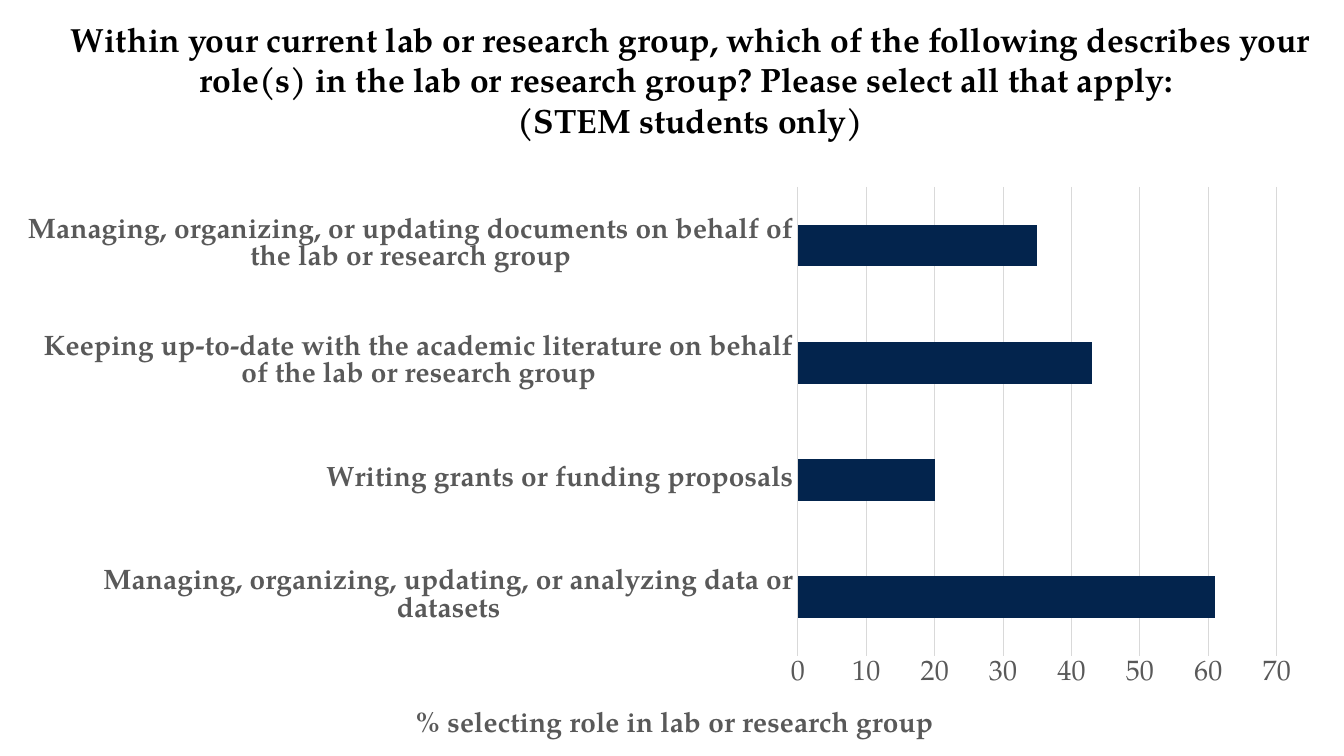
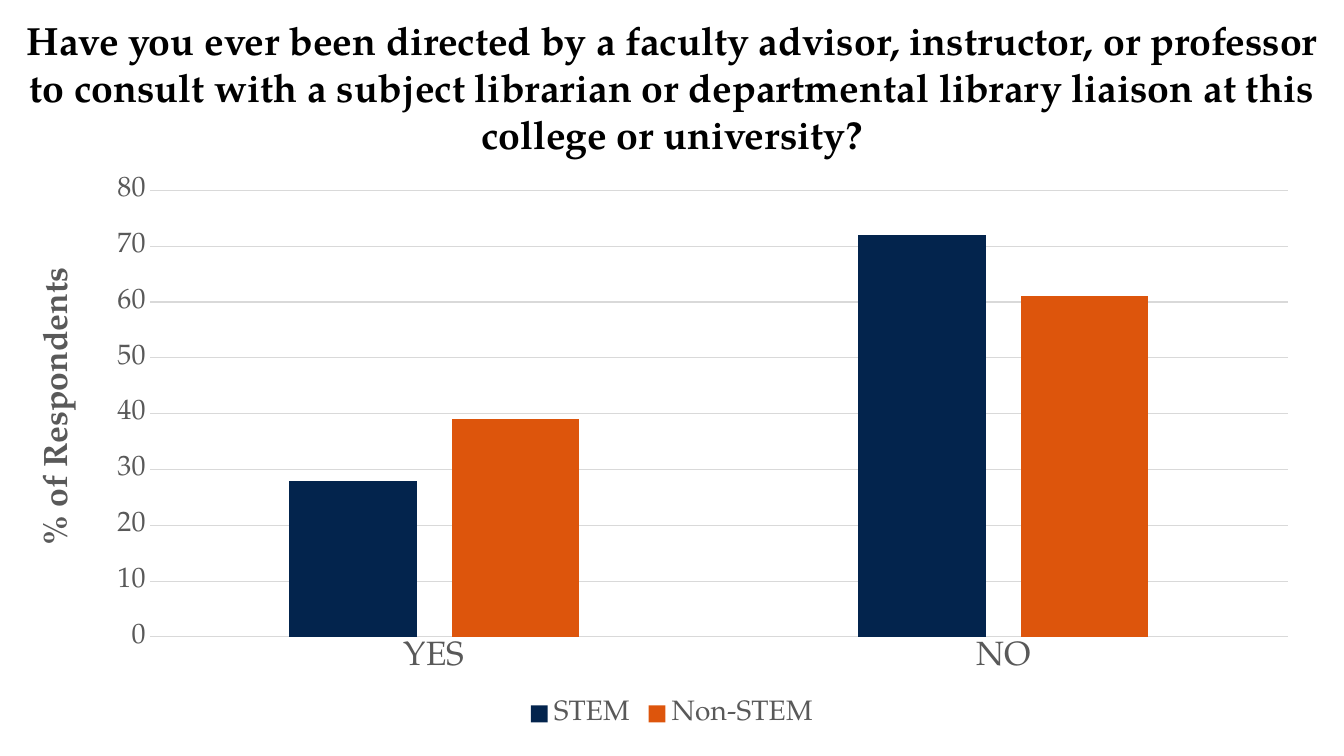
import pptx
import pptx.chart.data
import pptx.dml.color
import pptx.enum.chart
import pptx.enum.text
import pptx.oxml
import pptx.oxml.ns
import pptx.util

Pt = pptx.util.Pt
qn = pptx.oxml.ns.qn
XL = pptx.enum.chart

FONT = "TeX Gyre Pagella"
COLORS = {
    "title": "000000",
    "label": "595959",
    "grid": "D9D9D9",
    "navy": "03244D",
    "orange": "DD550C",
}


def rgb(name):
    return pptx.dml.color.RGBColor.from_string(COLORS[name])


def style_font(font, size, color="label", bold=False):
    font.name = FONT
    font.size = Pt(size)
    font.bold = bold
    font.color.rgb = rgb(color)


def write_text(tf, lines, **fmt):
    """Fill a text frame with centred paragraphs in one format."""
    for i, line in enumerate(lines):
        p = tf.add_paragraph() if i else tf.paragraphs[0]
        p.alignment = pptx.enum.text.PP_ALIGN.CENTER
        r = p.add_run()
        r.text = line
        style_font(r.font, **fmt)


def add_title(s, lines, box, size):
    tf = s.shapes.add_textbox(*map(Pt, box)).text_frame
    tf.word_wrap = True
    write_text(tf, lines, size=size, color="title", bold=True)


def place(element, frame, box, index=0):
    """Fix a chart part at box, given in slide points (left, top[, width, height])."""
    left, top, width, height = frame
    origin, extent = (left, top, 0, 0), (width, height, width, height)
    settings = [("xMode", "edge"), ("yMode", "edge")]
    if len(box) == 4:
        settings.insert(0, ("layoutTarget", "inner"))
    for key, value, start, total in zip("xywh", box, origin, extent):
        settings.append((key, str((value - start) / total)))

    for old in element.findall(qn("c:layout")):
        element.remove(old)
    layout = pptx.oxml.parse_xml(
        '<c:layout xmlns:c="http://schemas.openxmlformats.org/drawingml/2006/chart">'
        "<c:manualLayout>"
        + "".join(f'<c:{key} val="{value}"/>' for key, value in settings)
        + "</c:manualLayout></c:layout>")
    element.insert(index, layout)


def style_axis(axis, size, bold=False):
    axis.major_tick_mark = axis.minor_tick_mark = XL.XL_TICK_MARK.NONE
    style_font(axis.tick_labels.font, size, bold=bold)


def style_line(line):
    line.color.rgb = rgb("grid")
    line.width = Pt(0.75)


def add_bar_chart(s, kind, cats, series, frame, plot_box, axis_title, title_at,
                  title_size, maximum, gap, overlap=0, cat_size=20,
                  cat_bold=False, title_rotation=0, legend=False):
    """Add a bar or column chart; series holds (name, values, colour)."""
    data = pptx.chart.data.CategoryChartData()
    data.categories = cats
    for name, values, _ in series:
        data.add_series(name, values)
    chart = s.shapes.add_chart(kind, *map(Pt, frame), data).chart
    chart.has_title = False

    # Bars
    plot = chart.plots[0]
    plot.vary_by_categories = False
    plot.gap_width = gap
    plot.overlap = overlap
    for bars, (_, _, color) in zip(plot.series, series):
        bars.format.fill.solid()
        bars.format.fill.fore_color.rgb = rgb(color)

    # Axes
    style_axis(chart.category_axis, cat_size, cat_bold)
    style_line(chart.category_axis.format.line)
    axis = chart.value_axis
    style_axis(axis, 20)
    axis.minimum_scale, axis.maximum_scale, axis.major_unit = 0, maximum, 10
    axis.format.line.fill.background()
    style_line(axis.major_gridlines.format.line)

    # Value axis title
    tf = axis.axis_title.text_frame
    write_text(tf, [axis_title], size=title_size, bold=True)
    tf._txBody.find(qn("a:bodyPr")).set("rot", str(title_rotation * 60000))
    place(axis.axis_title._element, frame, title_at, index=1)

    # Legend and plot area
    chart.has_legend = legend
    if legend:
        chart.legend.position = XL.XL_LEGEND_POSITION.BOTTOM
        chart.legend.include_in_layout = False
        style_font(chart.legend.font, 20)
    place(chart._chartSpace.chart.plotArea, frame, plot_box)


def lab_roles(s):
    add_bar_chart(
        s, XL.XL_CHART_TYPE.BAR_CLUSTERED,
        ["Managing, organizing, updating, or analyzing data or datasets",
         "Writing grants or funding proposals",
         "Keeping up-to-date with the academic literature on behalf of the lab "
         "or research group",
         "Managing, organizing, or updating documents on behalf of the lab or "
         "research group"],
        [("Series 1", (61, 20, 43, 35), "navy")],
        frame=(13, 126, 929, 414), plot_box=(570, 133.5, 342, 335),
        axis_title="% selecting role in lab or research group",
        title_at=(293, 503), title_size=20, maximum=70, gap=182, cat_bold=True)
    add_title(
        s, ["Within your current lab or research group, which of the following "
            "describes your role(s) in the lab or research group? Please select "
            "all that apply: ",
            "(STEM students only)"],
        (13, 10, 960, 94), size=24)


def librarian_referrals(s):
    add_bar_chart(
        s, XL.XL_CHART_TYPE.COLUMN_CLUSTERED, ["YES", "NO"],
        [("STEM", (28, 72), "navy"), ("Non-STEM", (39, 61), "orange")],
        frame=(22, 117.5, 916, 407), plot_box=(107, 136, 813, 319),
        axis_title="% of Respondents", title_at=(24, 187), title_size=24,
        title_rotation=-90, maximum=80, gap=219, overlap=-27, cat_size=24,
        legend=True)
    add_title(
        s, ["Have you ever been directed by a faculty advisor, instructor, or "
            "professor to consult with a subject librarian or departmental "
            "library liaison at this college or university?"],
        (0, 8, 960, 109), size=28)


def main():
    prs = pptx.Presentation()
    prs.slide_width, prs.slide_height = Pt(960), Pt(540)
    for build in (lab_roles, librarian_referrals):
        build(prs.slides.add_slide(prs.slide_layouts[6]))
    prs.save("out.pptx")


if __name__ == "__main__":
    main()
